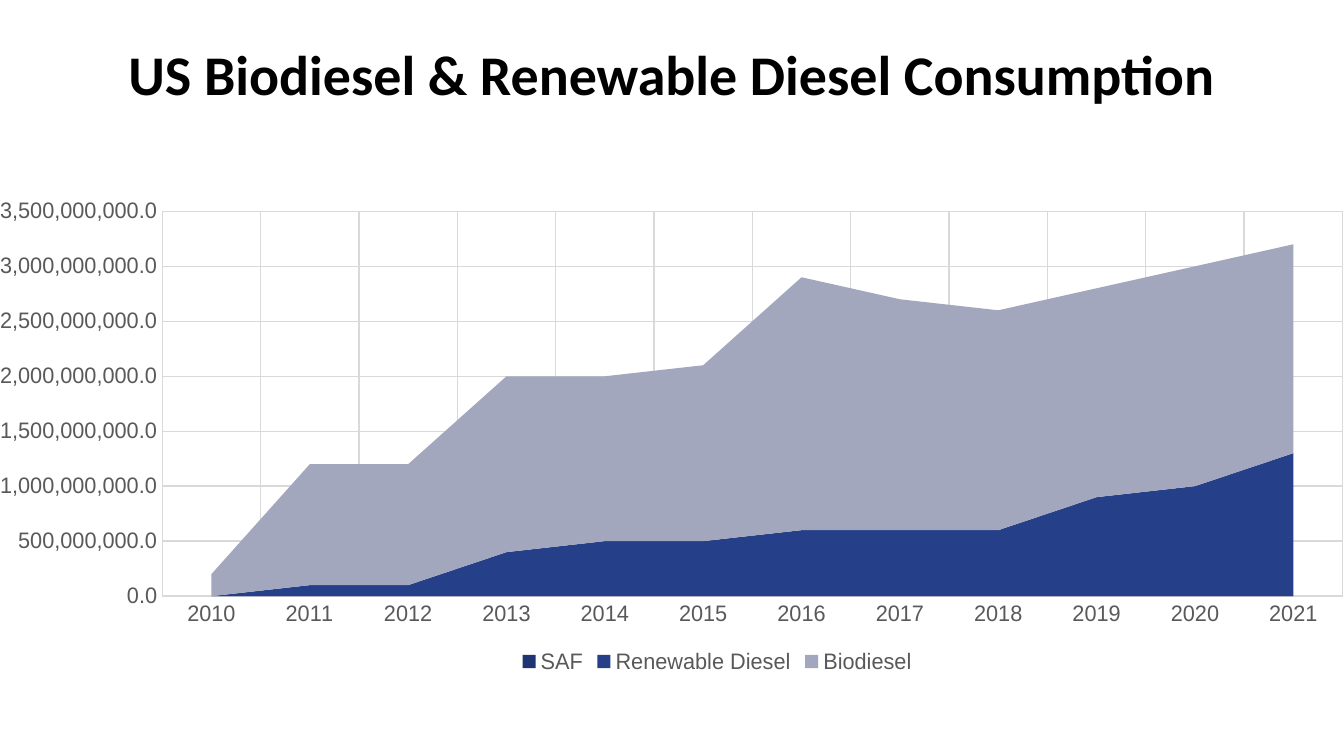
from dataclasses import dataclass

from lxml.etree import SubElement
from pptx import Presentation
from pptx.chart.data import CategoryChartData
from pptx.dml.color import RGBColor
from pptx.enum.chart import XL_CHART_TYPE, XL_LEGEND_POSITION, XL_TICK_MARK
from pptx.enum.text import MSO_ANCHOR, MSO_AUTO_SIZE, PP_ALIGN
from pptx.oxml.ns import qn
from pptx.util import Pt

TITLE = "US Biodiesel & Renewable Diesel Consumption"
YEARS = [str(year) for year in range(2010, 2022)]
HUNDRED_MILLION = 100_000_000
HUNDRED_MILLION_GALLONS = {
    "SAF": [None] * 6 + [0] * 6,
    "Renewable Diesel": [0, 1, 1, 4, 5, 5, 6, 6, 6, 9, 10, 13],
    "Biodiesel": [2, 11, 11, 16, 15, 16, 23, 21, 20, 19, 20, 19],
}
NUMBER_FORMAT = "#,##0.0"

PX = 9525
SLIDE_SIZE = (960, 540)
TITLE_BOX = (48, 19, 864, 67)
TITLE_INSET = 5
CHART_BOX = (0, 102, 960, 384)
PLOT_BOX = {"x": 90, "y": 49, "w": 869, "h": 275}
LEGEND_CORNER = {"x": 350, "y": 361}


@dataclass(frozen=True)
class Theme:
    title_font: str = "Calibri"
    chart_font: str = "Arial"
    title_size: int = 30
    chart_size: int = 12
    line_width: float = 0.75
    title: str = "000000"
    label: str = "595959"
    grid: str = "D9D9D9"
    series: tuple = ("1F3572", "254089", "A3A7BE")


THEME = Theme()


def color(value):
    return RGBColor.from_string(value)


def style_font(font, name, size, value):
    font.name = name
    font.size = Pt(size)
    font.color.rgb = color(value)


def style_label(font):
    style_font(font, THEME.chart_font, THEME.chart_size, THEME.label)


def style_axis(axis):
    axis.has_major_gridlines = True
    axis.major_tick_mark = axis.minor_tick_mark = XL_TICK_MARK.NONE
    style_label(axis.tick_labels.font)
    for line in (axis.format.line, axis.major_gridlines.format.line):
        line.color.rgb = color(THEME.grid)
        line.width = Pt(THEME.line_width)


def set_layout(part, index, modes, box):
    for old in part.findall(qn("c:layout")):
        part.remove(old)
    layout = SubElement(part, qn("c:layout"))
    part.insert(index, layout)
    manual = SubElement(layout, qn("c:manualLayout"))
    width, height = CHART_BOX[2:]
    totals = {"x": width, "y": height, "w": width, "h": height}
    fractions = {side: length / totals[side] for side, length in box.items()}
    for name, value in {**modes, **fractions}.items():
        SubElement(manual, qn(f"c:{name}")).set("val", str(value))


def arrange_chart(chart):
    edges = {"xMode": "edge", "yMode": "edge"}
    area = chart.element.find(".//" + qn("c:plotArea"))
    legend = chart.element.find(".//" + qn("c:legend"))
    set_layout(area, 0, {"layoutTarget": "inner", **edges}, PLOT_BOX)
    set_layout(legend, 1, edges, LEGEND_CORNER)
    area.find(".//" + qn("c:crossBetween")).set("val", "between")


def add_title(slide):
    title = slide.shapes.title
    title.left, title.top, title.width, title.height = (side * PX for side in TITLE_BOX)
    frame = title.text_frame
    frame.auto_size = MSO_AUTO_SIZE.NONE
    frame.word_wrap = True
    frame.vertical_anchor = MSO_ANCHOR.MIDDLE
    frame.margin_left = frame.margin_right = 0
    frame.margin_top = frame.margin_bottom = TITLE_INSET * PX
    para = frame.paragraphs[0]
    para.alignment = PP_ALIGN.CENTER
    span = para.add_run()
    span.text = TITLE
    span.font.bold = True
    style_font(span.font, THEME.title_font, THEME.title_size, THEME.title)


def add_consumption_chart(slide):
    data = CategoryChartData(number_format=NUMBER_FORMAT)
    data.categories = YEARS
    for name, amounts in HUNDRED_MILLION_GALLONS.items():
        gallons = [None if amount is None else amount * HUNDRED_MILLION for amount in amounts]
        data.add_series(name, gallons)
    box = [side * PX for side in CHART_BOX]
    chart = slide.shapes.add_chart(XL_CHART_TYPE.AREA_STACKED, *box, data).chart
    chart.has_title = False
    style_label(chart.font)
    chart.plots[0].vary_by_categories = False
    for series, fill in zip(chart.plots[0].series, THEME.series):
        series.format.fill.solid()
        series.format.fill.fore_color.rgb = color(fill)
        series.format.line.fill.background()
    style_axis(chart.category_axis)
    axis = chart.value_axis
    style_axis(axis)
    axis.minimum_scale = 0
    axis.maximum_scale = 35 * HUNDRED_MILLION
    axis.major_unit = 5 * HUNDRED_MILLION
    axis.tick_labels.number_format = NUMBER_FORMAT
    axis.tick_labels.number_format_is_linked = False
    chart.has_legend = True
    chart.legend.position = XL_LEGEND_POSITION.BOTTOM
    chart.legend.include_in_layout = False
    style_label(chart.legend.font)
    arrange_chart(chart)


def main():
    deck = Presentation()
    deck.slide_width, deck.slide_height = (side * PX for side in SLIDE_SIZE)
    page = deck.slides.add_slide(deck.slide_layouts[5])
    add_title(page)
    add_consumption_chart(page)
    deck.save("out.pptx")


if __name__ == "__main__":
    main()
